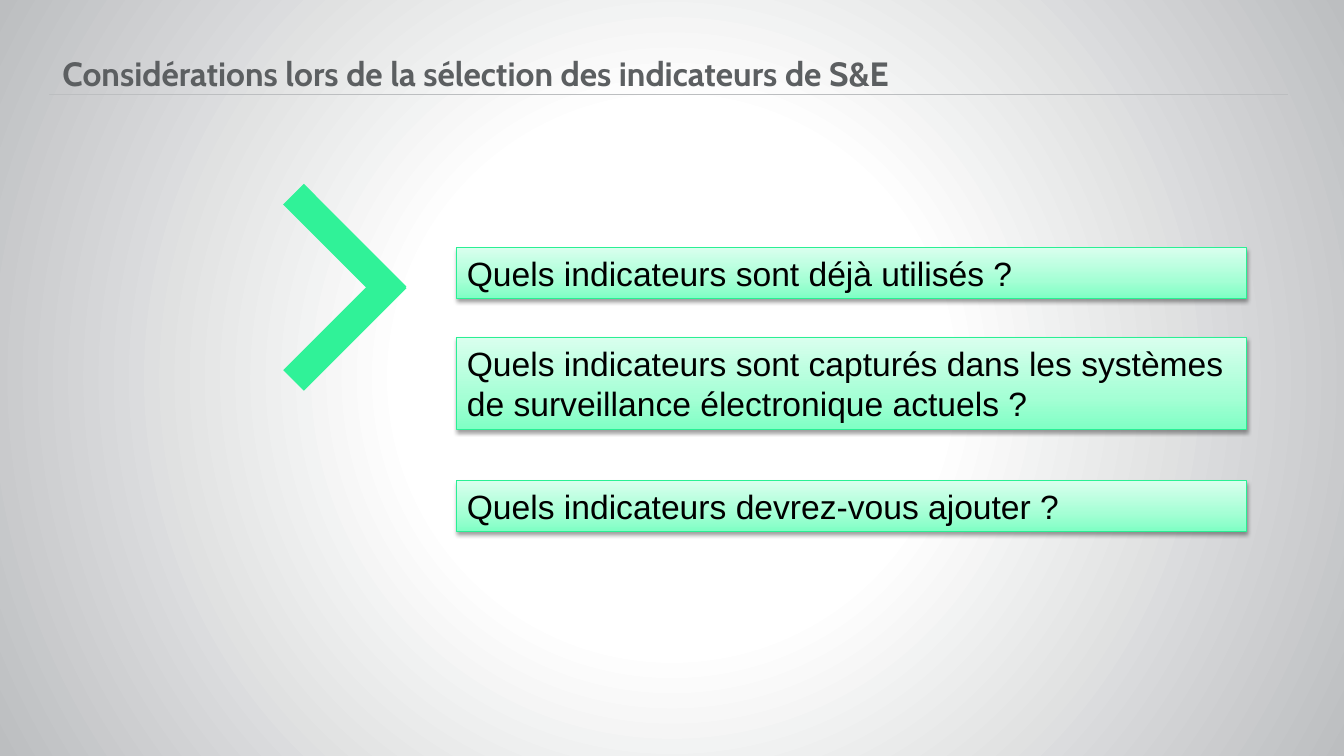
from lxml import etree
from pptx import Presentation
from pptx import util as u
from pptx.dml.color import RGBColor
from pptx.enum import shapes, text
from pptx.oxml import ns

WIDTH, HEIGHT = 13.33, 7.5
WHITE = RGBColor(0xFF, 0xFF, 0xFF)
BLACK = RGBColor(0x00, 0x00, 0x00)
SILVER = RGBColor(0xBC, 0xBE, 0xC0)
SLATE = RGBColor(0x5C, 0x5F, 0x61)
GREEN = RGBColor(0x30, 0xF2, 0x98)
EDGE = RGBColor(0x29, 0xF0, 0x94)
MINT = RGBColor(0x7F, 0xFF, 0xC4)
PALE_MINT = RGBColor(0xA5, 0xFF, 0xD5)
LIGHT_MINT = RGBColor(0xD9, 0xFF, 0xEE)

TITLE = "Considérations lors de la sélection des indicateurs de S&E"
# Question, top and height within the question column
QUESTIONS = [
    ("Quels indicateurs sont déjà utilisés ?", 0, 0.5),
    ("Quels indicateurs sont capturés dans les systèmes "
     "de surveillance électronique actuels ?", 0.89, 0.91),
    ("Quels indicateurs devrez-vous ajouter ?", 2.31, 0.5),
]
TITLE_FONT = {"name": "Cabin", "size": u.Pt(24), "bold": True}
QUESTION_FONT = {"name": "Arial", "size": u.Pt(24), "bold": False}
FRAME = {"word_wrap": True, "margin_top": u.Inches(0.05),
         "margin_bottom": u.Inches(0.05)}


def inches(*lengths):
    return [u.Inches(length) for length in lengths]


def set_all(target, values):
    for name, value in values.items():
        setattr(target, name, value)


def add_xml(parent, tag, **attributes):
    child = etree.SubElement(parent, ns.qn(tag))
    for name, value in attributes.items():
        child.set(name, str(value))
    return child


def set_gradient(parent, colors, angle=None):
    """Swap a solid fill for a gradient: linear with an angle, else circular."""
    solid = parent.find(ns.qn("a:solidFill"))
    gradient = add_xml(parent, "a:gradFill", rotWithShape=1)
    stops = add_xml(gradient, "a:gsLst")
    for share, color in zip((0, 35, 100), colors):
        stop = add_xml(stops, "a:gs", pos=share * 1000)
        add_xml(stop, "a:srgbClr", val=color)
    if angle is None:
        circle = add_xml(gradient, "a:path", path="circle")
        add_xml(circle, "a:fillToRect", l=50000, t=50000, r=50000, b=50000)
    else:
        add_xml(gradient, "a:lin", ang=angle * 60000, scaled=0)
    parent.replace(solid, gradient)


def add_shadow(box):
    box.shadow.inherit = False
    effects = box.element.spPr.find(ns.qn("a:effectLst"))
    shadow = add_xml(effects, "a:outerShdw", blurRad=u.Pt(3.1), dist=u.Pt(1.6),
                     dir=90 * 60000, rotWithShape=0)
    add_xml(add_xml(shadow, "a:srgbClr", val=BLACK), "a:alpha", val=37000)


def write(box, words, font, color, frame, **para_format):
    set_all(box.text_frame, {**FRAME, **frame})
    para = box.text_frame.paragraphs[0]
    set_all(para, {"alignment": text.PP_ALIGN.LEFT, **para_format})
    span = para.add_run()
    span.text = words
    set_all(span.font, font)
    span.font.color.rgb = color


def add_background(page):
    page.background.fill.solid()
    set_gradient(page.element.find(".//" + ns.qn("p:bgPr")),
                 (WHITE, WHITE, SILVER))


def add_heading(page, left, top, width, height):
    # Rule under the title
    rule_y = top + height - 0.04
    rule = page.shapes.add_connector(
        shapes.MSO_CONNECTOR.STRAIGHT,
        *inches(left - 0.13, rule_y, left + width + 0.05, rule_y))
    rule.line.color.rgb = SILVER
    rule.line.width = u.Pt(0.75)
    add_xml(rule.element.spPr, "a:effectLst")
    # Title
    box = page.shapes.add_textbox(*inches(left, top, width, height))
    write(box, TITLE, TITLE_FONT, SLATE,
          {"vertical_anchor": text.MSO_ANCHOR.BOTTOM,
           "margin_left": 0, "margin_right": 0}, line_spacing=0.9)


def add_chevron(page, left, top, width, height):
    # Two bars, each turned about its own centre
    for offset, rotation in ((height - 0.29, 135), (0, 225)):
        bar = page.shapes.add_shape(
            shapes.MSO_SHAPE.RECTANGLE,
            *inches(left, top + offset, width, 0.29))
        bar.rotation = rotation
        bar.shadow.inherit = False
        bar.fill.solid()
        bar.fill.fore_color.rgb = GREEN
        bar.line.fill.background()


def add_questions(page, left, top, width):
    for question, offset, height in QUESTIONS:
        box = page.shapes.add_shape(
            shapes.MSO_SHAPE.RECTANGLE,
            *inches(left, top + offset, width, height))
        box.fill.solid()
        set_gradient(box.element.spPr, (MINT, PALE_MINT, LIGHT_MINT), 270)
        box.line.color.rgb = EDGE
        box.line.width = u.Pt(0.75)
        add_shadow(box)
        write(box, question, QUESTION_FONT, BLACK,
              {"vertical_anchor": text.MSO_ANCHOR.TOP,
               "auto_size": text.MSO_AUTO_SIZE.SHAPE_TO_FIT_TEXT,
               "margin_left": u.Inches(0.1), "margin_right": u.Inches(0.1)})


def main():
    deck = Presentation()
    deck.slide_width, deck.slide_height = inches(WIDTH, HEIGHT)
    page = deck.slides.add_slide(deck.slide_layouts[6])
    add_background(page)
    add_heading(page, 0.62, 0.22, 12.1, 0.76)
    add_chevron(page, 2.7, 2.29, 1.44, 1.12)
    add_questions(page, WIDTH * 0.34, 2.46, 7.83)
    deck.save("out.pptx")


if __name__ == "__main__":
    main()
